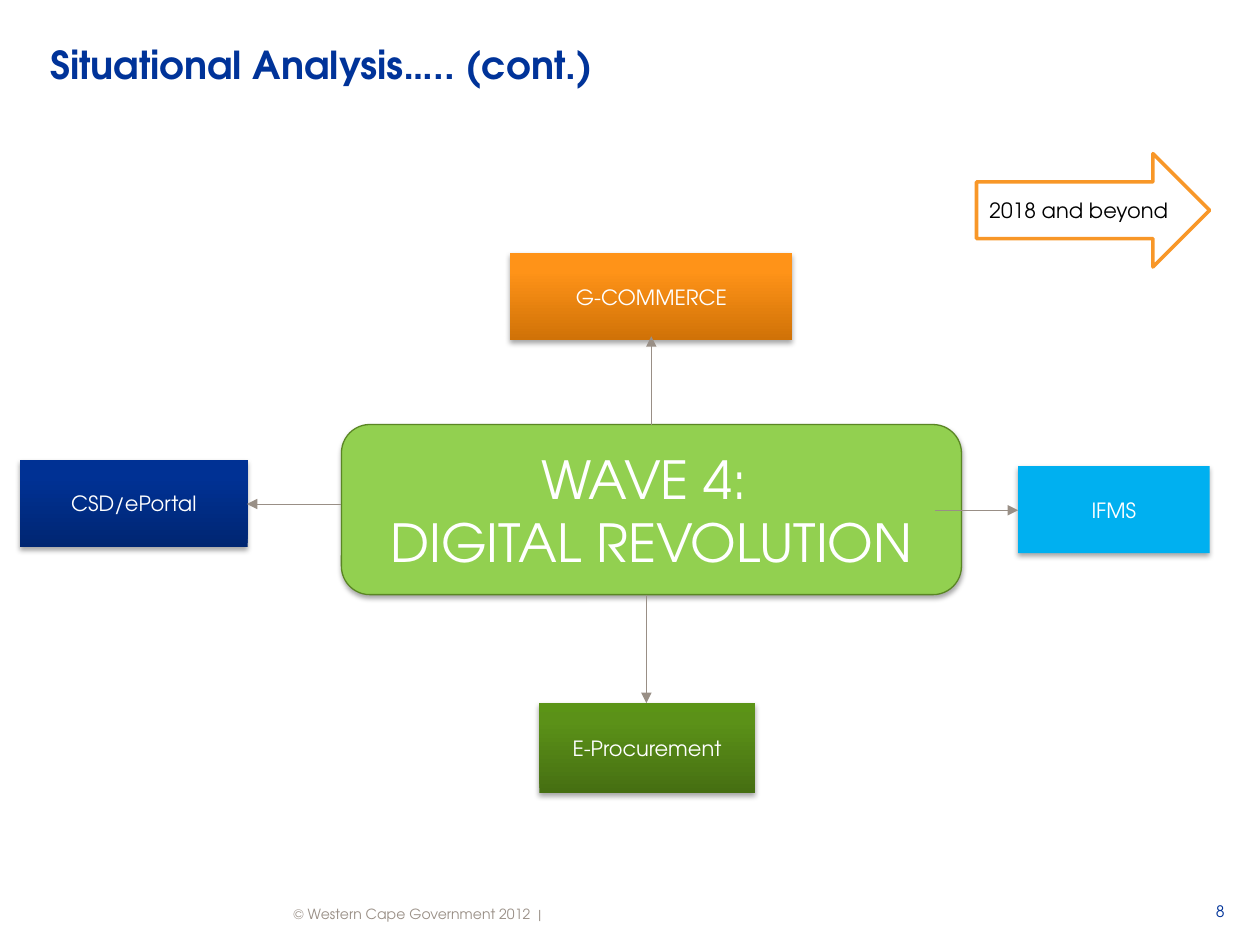
from copy import deepcopy

from lxml import etree
from pptx import Presentation
from pptx import util as u
from pptx.dml.color import RGBColor
from pptx.enum import shapes, text
from pptx.oxml import ns, parse_xml

Pt = u.Pt
KIND = shapes.MSO_SHAPE
ALIGN = text.PP_ALIGN
ANCHOR = text.MSO_ANCHOR
SHADOW = (
    f'<a:effectLst {ns.nsdecls("a")}>'
    '<a:outerShdw blurRad="39370" dist="22860" dir="5400000" rotWithShape="0">'
    '<a:srgbClr val="000000"><a:alpha val="35000"/></a:srgbClr>'
    '</a:outerShdw></a:effectLst>'
)


def color(value):
    return RGBColor.from_string(value)


class Diagram:
    font = "TeX Gyre Adventor"
    navy, grey, white = "003399", "998F86", "FFFFFF"
    inset = 5.67

    def __init__(self, slide):
        self.slide = slide

    def set_text(self, frame, words, size, ink, align, bold=False):
        frame.text = words
        for paragraph in frame.paragraphs:
            paragraph.alignment = align
            for run in paragraph.runs:
                run.font.name = self.font
                run.font.size = Pt(size)
                run.font.bold = bold
                run.font.color.rgb = color(ink)

    def label(self, box, words, size, ink, anchor, align=ALIGN.LEFT,
              bold=False, wrap=True, end_inset=0):
        frame = self.slide.shapes.add_textbox(*map(Pt, box)).text_frame
        frame.word_wrap = wrap
        frame.vertical_anchor = anchor
        frame.margin_left = frame.margin_top = Pt(self.inset)
        frame.margin_right = frame.margin_bottom = Pt(end_inset)
        self.set_text(frame, words, size, ink, align, bold)

    def gradient(self, shape, colors):
        shape.fill.gradient()
        shape.fill.gradient_angle = 90
        stop_list = shape._element.spPr.find(".//" + ns.qn("a:gsLst"))
        stop_list.append(deepcopy(stop_list[-1]))
        for stop, position, value in zip(shape.fill.gradient_stops, (0, 0.8, 1), colors):
            stop.position = position
            stop.color.rgb = color(value)

    def block(self, kind, box, words, fill, size=12, ink=white,
              line=None, shadow=True, wrap=True):
        shape = self.slide.shapes.add_shape(kind, *map(Pt, box))
        shape.shadow.inherit = False
        if isinstance(fill, str):
            shape.fill.solid()
            shape.fill.fore_color.rgb = color(fill)
        else:
            self.gradient(shape, fill)
        if line:
            shape.line.color.rgb = color(line[0])
            shape.line.width = Pt(line[1])
        else:
            shape.line.fill.background()
        if shadow:
            properties = shape._element.spPr
            properties.replace(properties.find(ns.qn("a:effectLst")), parse_xml(SHADOW))
        shape.text_frame.word_wrap = wrap
        shape.text_frame.vertical_anchor = ANCHOR.MIDDLE
        self.set_text(shape.text_frame, words, size, ink, ALIGN.CENTER)

    def arrow(self, start, end):
        connector = self.slide.shapes.add_connector(
            shapes.MSO_CONNECTOR.STRAIGHT, *map(Pt, start + end))
        connector.line.color.rgb = color(self.grey)
        connector.line.width = Pt(0.5)
        properties = connector._element.spPr
        line = properties.find(ns.qn("a:ln"))
        etree.SubElement(line, ns.qn("a:tailEnd"), type="triangle")
        etree.SubElement(properties, ns.qn("a:effectLst"))


def main():
    presentation = Presentation()
    presentation.slide_width, presentation.slide_height = Pt(720), Pt(540)
    diagram = Diagram(presentation.slides.add_slide(presentation.slide_layouts[6]))

    # Title, footer and page number
    diagram.label((162, 509, 153.4, 18), "© Western Cape Government 2012  |",
                  8, diagram.grey, ANCHOR.BOTTOM)
    diagram.label((23, 14.4, 676.8, 43.9), "Situational Analysis….. (cont.)",
                  22, diagram.navy, ANCHOR.MIDDLE, bold=True, wrap=False,
                  end_inset=diagram.inset)
    diagram.label((659.5, 509, 40.3, 18), "8", 9, diagram.navy,
                  ANCHOR.MIDDLE, ALIGN.RIGHT)

    # Central theme
    diagram.block(KIND.ROUNDED_RECTANGLE, (195.1, 242.6, 354.3, 97.2),
                  "WAVE 4: \nDIGITAL REVOLUTION", "92D050", size=30,
                  line=("5A8624", 0.75))

    # Surrounding systems, each with the arrow that leads to it
    systems = [
        ("E-Procurement", (308.2, 401.8, 123.1, 51.1),
         ("466F12", "5B9118", "5B9416"), (369.4, 339.8), (369.4, 401.8)),
        ("G-COMMERCE", (291.6, 144.7, 161.3, 49.7),
         ("D07207", "FF9318", "FF9419"), (372.2, 242.6), (372.2, 192.2)),
        ("CSD/ePortal", (11.5, 262.8, 130, 49.7),
         ("002672", "003194", "003295"), (195.1, 288), (141.1, 288)),
        ("IFMS", (581.8, 266.4, 109.4, 49.7),
         "00B0F0", (534.2, 291.6), (581.8, 291.6)),
    ]
    for name, box, fill, start, end in systems:
        diagram.block(KIND.RECTANGLE, box, name, fill)
        diagram.arrow(start, end)

    # Time frame
    diagram.block(KIND.RIGHT_ARROW, (558, 87.8, 133.2, 64.8), "2018 and beyond",
                  diagram.white, ink="000000", line=("F89728", 2),
                  shadow=False, wrap=False)

    presentation.save("out.pptx")


if __name__ == "__main__":
    main()
